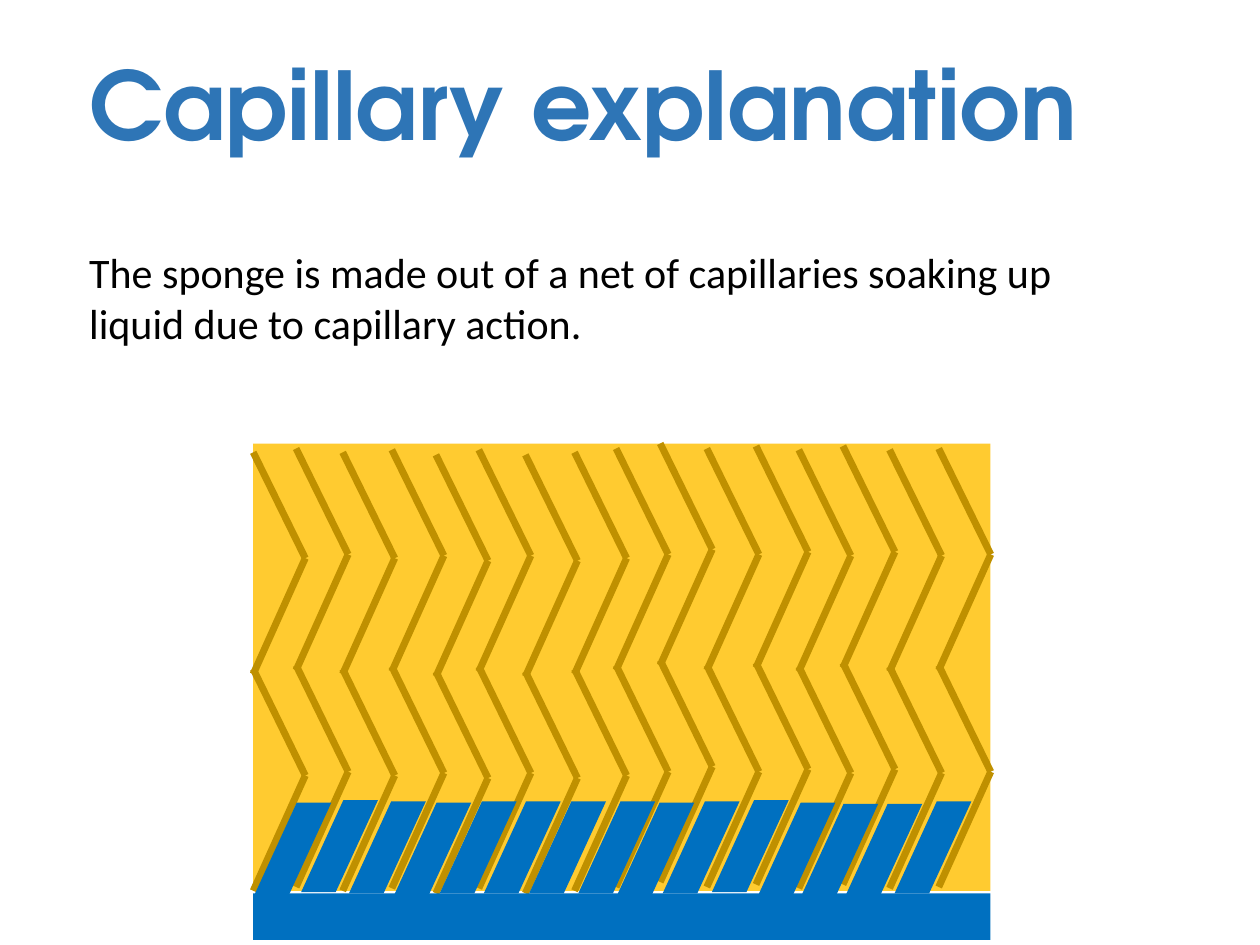
"""Build the slide that explains how a sponge soaks up liquid by capillary action."""
import itertools

import pptx
import pptx.dml.color
import pptx.enum.shapes
import pptx.enum.text
import pptx.oxml.ns
import pptx.util
from lxml import etree

COLORS = {"title": "2E75B6", "text": "000000", "sponge": "FFC000",
          "wall": "BF9000", "liquid": "0070C0"}
SHAPES = pptx.enum.shapes.MSO_SHAPE
RGB = pptx.dml.color.RGBColor.from_string

deck = pptx.Presentation()
deck.slide_width = pptx.util.Inches(10)
deck.slide_height = pptx.util.Inches(7.5)
column = deck.slide_width / 100
row = deck.slide_height / 75
page = deck.slides.add_slide(deck.slide_layouts[5])


def grid(*lengths):
    """Turn alternating columns and rows into lengths on the page."""
    return [round(length * unit) for length, unit in zip(lengths, itertools.cycle((column, row)))]


def add_area(kind, place, color):
    """Add a filled shape without outline or shadow."""
    area = page.shapes.add_shape(kind, *grid(*place))
    area.shadow.inherit = False
    area.fill.solid()
    area.fill.fore_color.rgb = RGB(COLORS[color])
    area.line.fill.background()
    return area


title = page.shapes.title
title.left, title.top, title.width, title.height = grid(6.1, 3.7, 86.2, 10.1)
title.text_frame.text = "Capillary explanation"
title.text_frame.auto_size = pptx.enum.text.MSO_AUTO_SIZE.NONE
title.text_frame.vertical_anchor = pptx.enum.text.MSO_ANCHOR.MIDDLE
para = title.text_frame.paragraphs[0]
para.alignment = pptx.enum.text.PP_ALIGN.LEFT
para.line_spacing = 0.9
para.font.name = "TeX Gyre Adventor"
para.font.size = pptx.util.Pt(54)
para.font.bold = True
para.font.color.rgb = RGB(COLORS["title"])

sponge = add_area(SHAPES.RECTANGLE, (20.1, 35.2, 58.5, 35.5), "sponge")
sponge_color = sponge.fill._xPr.find(".//" + pptx.oxml.ns.qn("a:srgbClr"))
etree.SubElement(sponge_color, pptx.oxml.ns.qn("a:alpha"), val="81000")

wall_feet = [(20.1, 70.7), (23.5, 70.4), (27.2, 70.7), (31.1, 70.5),
             (34.6, 70.9), (38, 70.5), (41.7, 70.9), (45.6, 70.7),
             (48.9, 70.4), (52.4, 70), (56.1, 70.4), (60, 70.2),
             (63.4, 70.5), (66.9, 70.2), (70.6, 70.5), (74.5, 70.4)]
wall_bend = 4.13
wall_parts = [(0, 0, wall_bend, 9.15), (wall_bend, 9.15, 0, 17.6),
              (0, 17.2, wall_bend, 26.4), (wall_bend, 26.4, 0, 34.8)]
for (foot_x, foot_y), (start_x, start_y, end_x, end_y) in itertools.product(wall_feet, wall_parts):
    wall = page.shapes.add_connector(
        pptx.enum.shapes.MSO_CONNECTOR.STRAIGHT,
        *grid(foot_x + start_x, foot_y - start_y, foot_x + end_x, foot_y - end_y))
    wall.line.color.rgb = RGB(COLORS["wall"])
    wall.line.width = pptx.util.Pt(4)
    etree.SubElement(wall._element.spPr, pptx.oxml.ns.qn("a:effectLst"))

add_area(SHAPES.RECTANGLE, (20.1, 70.9, 58.5, 3.7), "liquid")
liquid_corners = [(20.2, 63.7), (23.9, 63.5), (27.7, 63.6), (31.3, 63.7),
                  (34.9, 63.6), (38.4, 63.6), (42, 63.6), (45.9, 63.6),
                  (49, 63.7), (52.6, 63.6), (56.5, 63.5), (60.2, 63.7),
                  (63.6, 63.8), (67.1, 63.8), (71, 63.6)]
for left, top in liquid_corners:
    liquid = add_area(SHAPES.PARALLELOGRAM, (left, top, 6.1, 7.3), "liquid")
    liquid.adjustments[0] = 0.55

box = page.shapes.add_textbox(*grid(6.1, 19.1, 84.7, 9.1))
box.text_frame.word_wrap = True
box.text_frame.auto_size = pptx.enum.text.MSO_AUTO_SIZE.SHAPE_TO_FIT_TEXT
para = box.text_frame.paragraphs[0]
para.text = ("The sponge is made out of a net of capillaries soaking up "
             "liquid due to capillary action.")
para.font.name = "Calibri"
para.font.size = pptx.util.Pt(24)
para.font.color.rgb = RGB(COLORS["text"])

deck.save("out.pptx")
